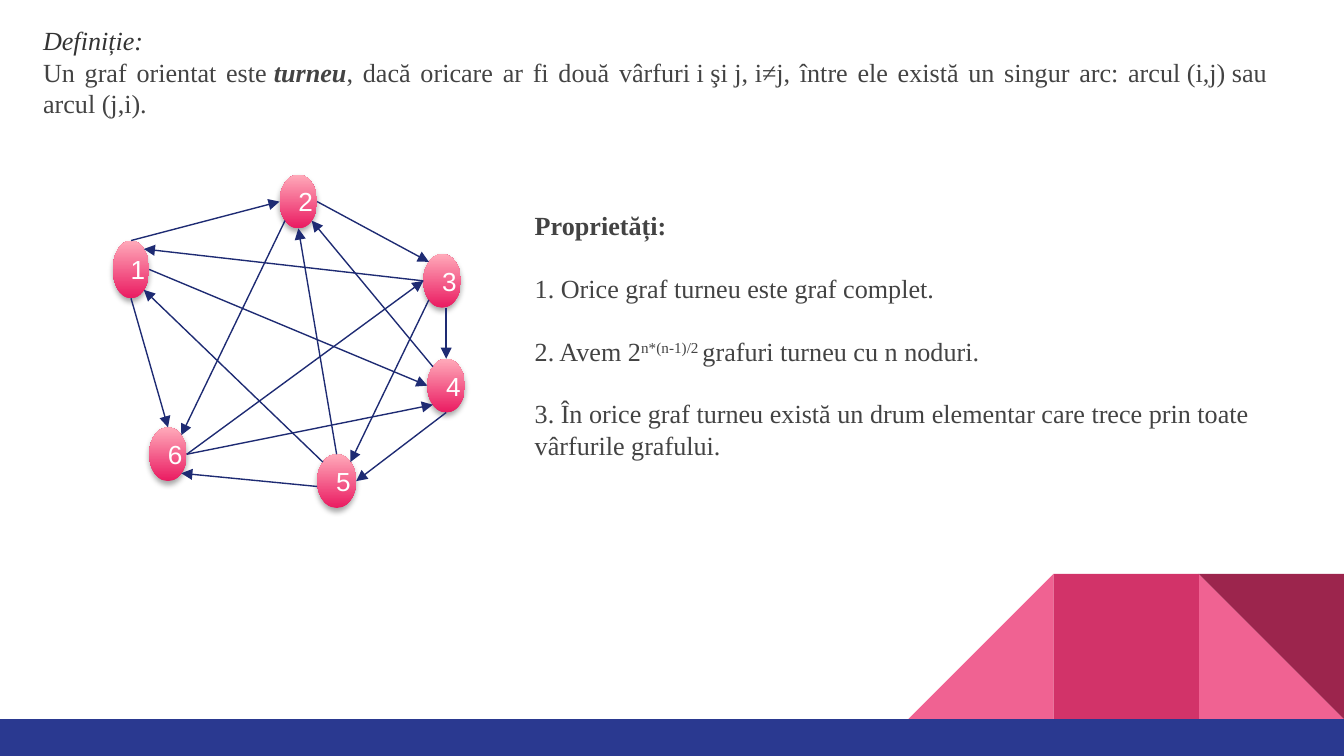
from math import cos, radians, sin

from lxml import etree
from pptx import Presentation
from pptx.dml.color import RGBColor
from pptx.enum import shapes, text
from pptx.oxml import parse_xml
from pptx.oxml.ns import nsdecls, qn
from pptx.util import Inches, Pt

PINK = RGBColor(0xF0, 0x62, 0x92)
ROSE = RGBColor(0xD2, 0x33, 0x69)
WINE = RGBColor(0x9C, 0x25, 0x4D)
BLUE = RGBColor(0x2A, 0x39, 0x90)
NAVY = RGBColor(0x1E, 0x2B, 0x73)
NODE_DARK = RGBColor(0xEA, 0x1B, 0x61)
NODE_LIGHT = RGBColor(0xFF, 0xAA, 0xBA)
WHITE = RGBColor(0xFF, 0xFF, 0xFF)
DARK_GREY = RGBColor(0x33, 0x33, 0x33)
GREY = RGBColor(0x43, 0x43, 0x43)
NO_BREAK_SPACE = chr(160)


def add_run(p, words, font="Times New Roman", size=14, color=GREY,
            bold=False, italic=False, baseline=0):
    """Add formatted text, in which ~ stands for a no-break space."""
    r = p.add_run()
    r.text = words.replace("~", NO_BREAK_SPACE)
    r.font.name, r.font.size = font, Pt(size)
    r.font.bold, r.font.italic = bold, italic
    r.font.color.rgb = color
    if baseline:
        r.font._element.set("baseline", str(baseline * 1000))


def set_bullet(p, tag, **attributes):
    """Start the paragraph at the left margin with the given bullet element."""
    pPr = p._p.get_or_add_pPr()
    pPr.set("marL", "0")
    pPr.set("indent", "0")
    etree.SubElement(pPr, qn(tag), **attributes)


prs = Presentation()
prs.slide_width = Inches(10)
prs.slide_height = prs.slide_width * 9 // 16
s = prs.slides.add_slide(prs.slide_layouts[1])
title, body = s.placeholders
title._element.getparent().remove(title._element)

# Corner decoration and footer bar
MSO = shapes.MSO_SHAPE
SIDE = 1.08
TOP = 4.27
for kind, x, y, w, h, color, flip, rotation in [
    (MSO.RIGHT_TRIANGLE, 10 - SIDE, TOP, SIDE, SIDE, PINK, False, 0),
    (MSO.RIGHT_TRIANGLE, 10 - 3 * SIDE, TOP, SIDE, SIDE, PINK, True, 0),
    (MSO.RECTANGLE, 10 - 2 * SIDE, TOP, SIDE, SIDE, ROSE, False, 0),
    (MSO.RIGHT_TRIANGLE, 10 - SIDE, TOP, SIDE, SIDE, WINE, False, 180),
    (MSO.RECTANGLE, 0, TOP + SIDE, 10, 0.28, BLUE, False, 0),
]:
    sp = s.shapes.add_shape(kind, Inches(x), Inches(y), Inches(w), Inches(h))
    sp.fill.solid()
    sp.fill.fore_color.rgb = color
    sp.line.fill.background()
    sp.shadow.inherit = False
    sp.rotation = rotation
    if flip:
        sp._element.spPr.find(qn("a:xfrm")).set("flipH", "1")

# Definition
body.left, body.top = Inches(0.22), Inches(0.13)
body.width, body.height = Inches(9.32), Inches(0.81)
tf = body.text_frame
tf.auto_size = text.MSO_AUTO_SIZE.NONE
tf.vertical_anchor = text.MSO_ANCHOR.MIDDLE
heading, definition = tf.paragraphs[0], tf.add_paragraph()
for p in (heading, definition):
    p.alignment = text.PP_ALIGN.JUSTIFY
    p.line_spacing = 1.0
    p.space_before = Pt(0)
    set_bullet(p, "a:buNone")
add_run(heading, "Definiție:", color=DARK_GREY, italic=True)
add_run(definition, "Un graf orientat este~")
add_run(definition, "turneu", bold=True, italic=True)
add_run(definition, ", dacă oricare ar fi două vârfuri~i~şi~j,~i≠j, "
                    "între ele există un singur arc: arcul~(i,j)~sau arcul~(j,i).")

# Graph nodes: left, top, width, height
nodes = {
    1: (0.84, 1.79, 0.27, 0.43),
    6: (1.11, 3.18, 0.28, 0.4),
    2: (2.08, 1.3, 0.28, 0.4),
    5: (2.36, 3.38, 0.29, 0.4),
    3: (3.15, 1.89, 0.28, 0.4),
    4: (3.18, 2.67, 0.28, 0.4),
}
for label, box in nodes.items():
    sp = s.shapes.add_shape(MSO.OVAL, *map(Inches, box))
    sp.fill.gradient()
    sp.fill.gradient_angle = 90
    for stop, color in zip(sp.fill.gradient_stops, (NODE_DARK, NODE_LIGHT)):
        stop.color.rgb = color
    sp.line.fill.background()
    sp._element.spPr.append(parse_xml(
        f'<a:effectLst {nsdecls("a")}><a:outerShdw blurRad="{Pt(3.1)}" '
        f'dist="{Pt(1.8)}" dir="5400000" rotWithShape="0"><a:srgbClr val="000000">'
        '<a:alpha val="35000"/></a:srgbClr></a:outerShdw></a:effectLst>'))
    sp.text_frame.vertical_anchor = text.MSO_ANCHOR.MIDDLE
    p = sp.text_frame.paragraphs[0]
    p.alignment = text.PP_ALIGN.CENTER
    add_run(p, str(label), font="Arial", color=WHITE)

# Arcs leave and reach the node outline at compass points
ANGLES = {"E": 0, "SE": 45, "S": 90, "SW": 135, "W": 180, "NW": 225, "N": 270, "NE": 315}


def rim_point(node, side):
    x, y, w, h = nodes[node]
    angle = radians(ANGLES[side])
    return x + w / 2 * (1 + cos(angle)), y + h / 2 * (1 + sin(angle))


for start, start_side, end, end_side in [
    (1, "N", 2, "W"), (1, "S", 6, "N"), (1, "E", 4, "W"),
    (5, "NW", 1, "SE"), (3, "W", 1, "NE"), (2, "E", 3, "NW"),
    (2, "SW", 6, "NE"), (5, "N", 2, "S"), (4, "NW", 2, "SE"),
    (3, "S", 4, "N"), (3, "SW", 5, "NE"), (6, "E", 3, "W"),
    (4, "S", 5, "E"), (6, "E", 4, "SW"), (5, "W", 6, "SE"),
]:
    x1, y1 = rim_point(start, start_side)
    x2, y2 = rim_point(end, end_side)
    if (start, end) == (3, 4):
        x1 = x2  # keep this arc vertical
    if (start, end) == (5, 6):
        y1 += 0.04  # leave just below the middle
    arc = s.shapes.add_connector(shapes.MSO_CONNECTOR.STRAIGHT,
                                 *map(Inches, (x1, y1, x2, y2)))
    arc.line.color.rgb = NAVY
    arc.line.width = Pt(0.75)
    etree.SubElement(arc.line._get_or_add_ln(), qn("a:tailEnd"), type="triangle")
    etree.SubElement(arc._element.spPr, qn("a:effectLst"))

# Properties
sp = s.shapes.add_textbox(Inches(3.88), Inches(1.55), Inches(5.81), Inches(2.24))
tf = sp.text_frame
tf.word_wrap = True
tf.margin_top = Inches(0.01)
p = tf.paragraphs[0]
add_run(p, "Proprietăți:", bold=True)
for parts in [
    [(" Orice graf turneu este graf complet.", 0)],
    [(" Avem~2", 0), ("n*(n-1)/2~", 30), ("grafuri turneu cu~n~noduri.", 0)],
    [(" În orice graf turneu există un drum elementar care trece "
      "prin toate vârfurile grafului.", 0)],
]:
    p = tf.add_paragraph()
    p.space_before = Pt(16.8)
    set_bullet(p, "a:buAutoNum", type="arabicPeriod")
    for words, baseline in parts:
        add_run(p, words, baseline=baseline)

prs.save("out.pptx")
